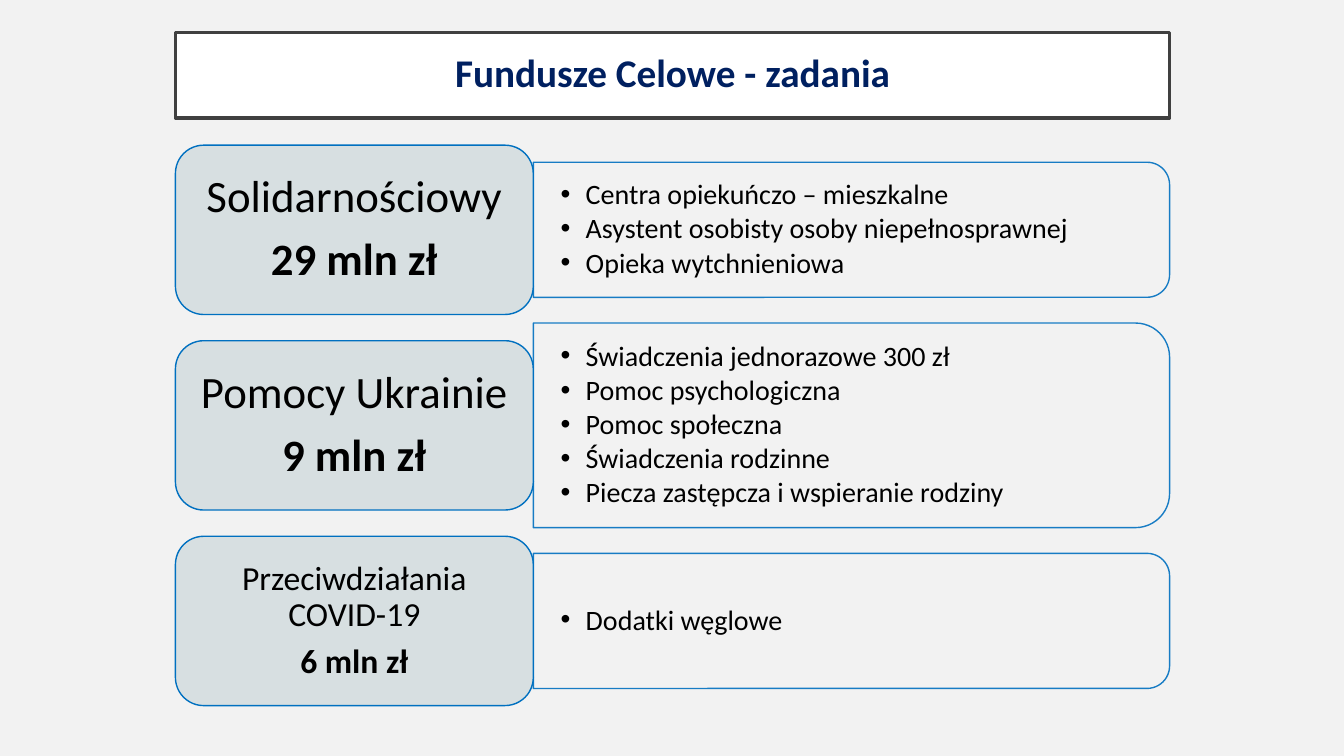
from pptx import Presentation
from pptx.dml.color import RGBColor
from pptx.enum.shapes import MSO_SHAPE
from pptx.enum.text import MSO_ANCHOR, PP_ALIGN
from pptx.oxml.ns import qn
from pptx.util import Inches, Pt
from lxml.etree import SubElement

PAGE = RGBColor(0xF2, 0xF2, 0xF2)
WHITE = RGBColor(0xFF, 0xFF, 0xFF)
BLACK = RGBColor(0, 0, 0)
NAVY = RGBColor(0x00, 0x20, 0x60)
BLUE = RGBColor(0x00, 0x70, 0xC0)
CHARCOAL = RGBColor(0x40, 0x40, 0x40)
MIST = RGBColor(0xD7, 0xDF, 0xE1)

LEFT, WIDTH = 1.74, 9.86
FUND_WIDTH = WIDTH * 0.36
TASK_WIDTH = WIDTH - FUND_WIDTH
FIRST_ROW, ROW_HEIGHT, ROW_GAP = 1.44, 1.68, 0.26

FUNDS = [
    ("Solidarnościowy", "29 mln zł", 32, 1.34,
     ["Centra opiekuńczo – mieszkalne",
      "Asystent osobisty osoby niepełnosprawnej",
      "Opieka wytchnieniowa"]),
    ("Pomocy Ukrainie", "9 mln zł", 32, 2.03,
     ["Świadczenia jednorazowe 300 zł",
      "Pomoc psychologiczna",
      "Pomoc społeczna",
      "Świadczenia rodzinne",
      "Piecza zastępcza i wspieranie rodziny"]),
    ("Przeciwdziałania COVID-19", "6 mln zł", 24, 1.34,
     ["Dodatki węglowe"]),
]


def set_alpha(color_format_fill, percent):
    for color in color_format_fill.iter(qn("a:srgbClr")):
        SubElement(color, qn("a:alpha")).set("val", str(percent * 1000))


def add_box(page, kind, left, top, width, height, fill, line, weight):
    box = page.shapes.add_shape(kind, Inches(left), Inches(top),
                                Inches(width), Inches(height))
    box.shadow.inherit = False
    box.fill.solid()
    box.fill.fore_color.rgb = fill
    box.line.color.rgb = line
    box.line.width = Pt(weight)
    return box


def set_frame(box, side, end):
    frame = box.text_frame
    frame.word_wrap = True
    frame.vertical_anchor = MSO_ANCHOR.MIDDLE
    frame.margin_left = frame.margin_right = Inches(side)
    frame.margin_top = frame.margin_bottom = Inches(end)


def write(para, text, size=20, color=BLACK, bold=False,
          align=PP_ALIGN.LEFT, after=0, bullet=False):
    para.alignment = align
    para.line_spacing = 0.9
    para.space_after = Pt(size * after)
    span = para.add_run()
    span.text = text
    span.font.name = "Calibri"
    span.font.size = Pt(size)
    span.font.bold = bold
    span.font.color.rgb = color
    if bullet:
        properties = para._p.get_or_add_pPr()
        properties.set("marL", str(Inches(0.25)))
        properties.set("indent", str(-Inches(0.25)))
        SubElement(properties, qn("a:buFont")).set("typeface", "Arial")
        SubElement(properties, qn("a:buChar")).set("char", "•")


def add_title(page):
    box = add_box(page, MSO_SHAPE.RECTANGLE, LEFT, 0.32, WIDTH, 0.85,
                  WHITE, CHARCOAL, 2.5)
    set_frame(box, 0.2, 0.2)
    write(box.text_frame.paragraphs[0], "Fundusze Celowe - zadania", size=28,
          color=NAVY, bold=True, align=PP_ALIGN.CENTER)


def add_tasks(page, middle, height, tasks):
    left = LEFT + FUND_WIDTH
    panel = add_box(page, MSO_SHAPE.ROUND_2_SAME_RECTANGLE,
                    left + (TASK_WIDTH - height) / 2, middle - TASK_WIDTH / 2,
                    height, TASK_WIDTH, PAGE, BLUE, 1)
    panel.rotation = 90
    set_alpha(panel._element.spPr, 90)
    box = page.shapes.add_textbox(Inches(left), Inches(middle - height / 2),
                                  Inches(TASK_WIDTH), Inches(height))
    set_frame(box, 0.27, 0.14)
    frame = box.text_frame
    for index, task in enumerate(tasks):
        para = frame.add_paragraph() if index else frame.paragraphs[0]
        write(para, task, after=0.14, bullet=True)


def add_fund(page, top, name, amount, size):
    box = add_box(page, MSO_SHAPE.ROUNDED_RECTANGLE, LEFT, top,
                  FUND_WIDTH, ROW_HEIGHT, MIST, BLUE, 1)
    set_frame(box, 0.13, 0.07)
    frame = box.text_frame
    write(frame.paragraphs[0], name, size=size, align=PP_ALIGN.CENTER,
          after=0.33)
    write(frame.add_paragraph(), amount, size=size, bold=True,
          align=PP_ALIGN.CENTER, after=0.33)


def main():
    deck = Presentation()
    deck.slide_width, deck.slide_height = Inches(13.33), Inches(7.5)
    page = deck.slides.add_slide(deck.slide_layouts[6])
    page.background.fill.solid()
    page.background.fill.fore_color.rgb = PAGE
    add_title(page)
    for row, (name, amount, size, height, tasks) in enumerate(FUNDS):
        top = FIRST_ROW + row * (ROW_HEIGHT + ROW_GAP)
        add_tasks(page, top + ROW_HEIGHT / 2, height, tasks)
        add_fund(page, top, name, amount, size)
    deck.save("out.pptx")


if __name__ == "__main__":
    main()
